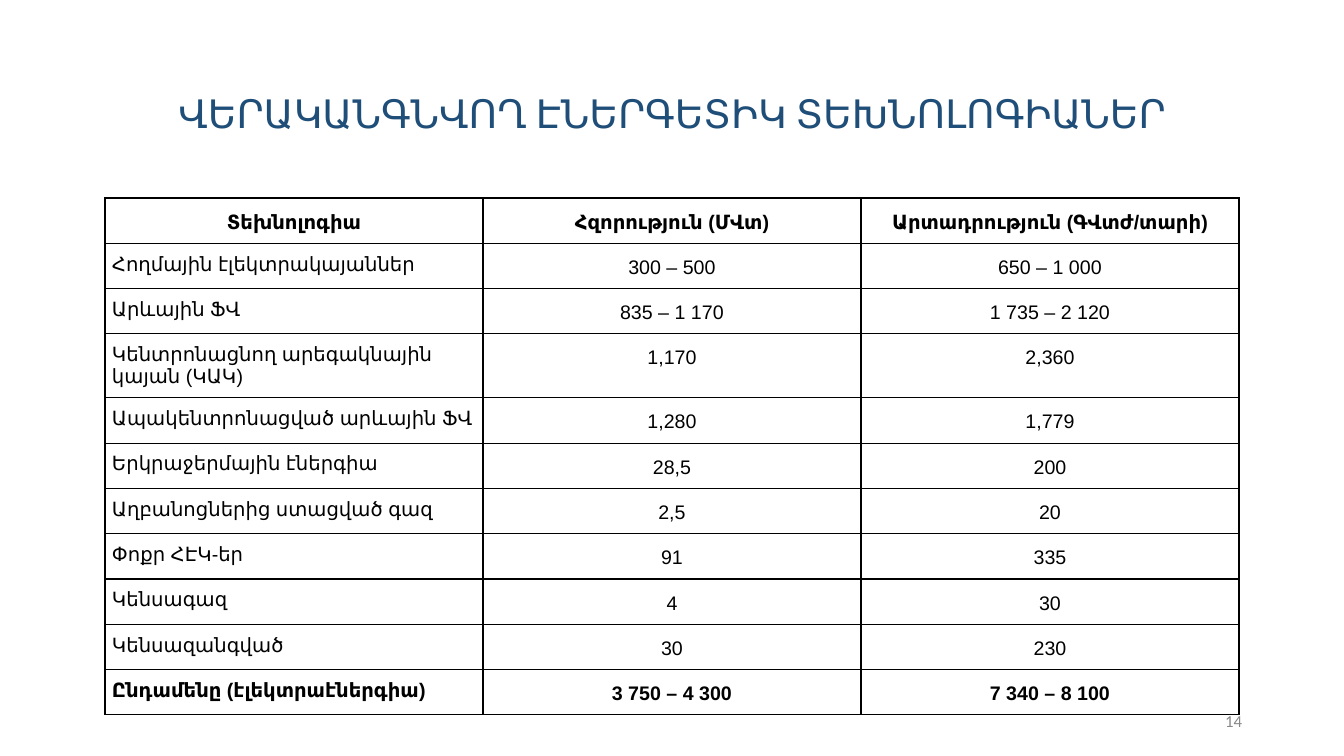
"""Build a slide with a table of renewable energy technologies."""
from lxml.etree import SubElement
from pptx import Presentation
from pptx.dml.color import RGBColor
from pptx.enum.text import MSO_ANCHOR as Anchor, PP_ALIGN as Align
from pptx.oxml.ns import qn
from pptx.util import Pt

BLACK = RGBColor(0x00, 0x00, 0x00)
NAVY = RGBColor(0x1F, 0x4E, 0x79)
GRAY = RGBColor(0x88, 0x88, 0x88)
SLIDE_WIDTH, SLIDE_HEIGHT = 1344, 756
COLUMN_WIDTH, ROW_HEIGHT = 378, 42
BORDER_WIDTH = Pt(1)

ROWS = [
    ("Տեխնոլոգիա", "Հզորություն (ՄՎտ)", "Արտադրություն (ԳՎտժ/տարի)"),
    ("Հողմային էլեկտրակայաններ", "300 – 500", "650 – 1 000"),
    ("Արևային ՖՎ", "835 – 1 170", "1 735 – 2 120"),
    ("Կենտրոնացնող արեգակնային կայան (ԿԱԿ)", "1,170", "2,360"),
    ("Ապակենտրոնացված արևային ՖՎ", "1,280", "1,779"),
    ("Երկրաջերմային էներգիա", "28,5", "200"),
    ("Աղբանոցներից ստացված գազ", "2,5", "20"),
    ("Փոքր ՀԷԿ-եր", "91", "335"),
    ("Կենսագազ", "4", "30"),
    ("Կենսազանգված", "30", "230"),
    ("Ընդամենը (էլեկտրաէներգիա)", "3 750 – 4 300", "7 340 – 8 100"),
]
TEXTS = [
    ("ՎԵՐԱԿԱՆԳՆՎՈՂ ԷՆԵՐԳԵՏԻԿ ՏԵԽՆՈԼՈԳԻԱՆԵՐ", (93, 40, 1159, 146), 28, NAVY, Align.CENTER),
    ("14", (950, 701, 302, 40), 12, GRAY, Align.RIGHT),
]


def px(length):
    return round(length * 12192000 / SLIDE_WIDTH)


def format_paragraph(paragraph, font_name, size, color, alignment, bold=False):
    paragraph.alignment = alignment
    font = paragraph.runs[0].font
    font.name, font.size, font.bold = font_name, Pt(size), bold
    font.color.rgb = color


presentation = Presentation()
presentation.slide_width = px(SLIDE_WIDTH)
presentation.slide_height = px(SLIDE_HEIGHT)
slide = presentation.slides.add_slide(presentation.slide_layouts[6])

table = slide.shapes.add_table(
    len(ROWS), 3, px(105), px(198), px(3 * COLUMN_WIDTH), px(len(ROWS) * ROW_HEIGHT)
).table
table.first_row = table.horz_banding = False
for column in table.columns:
    column.width = px(COLUMN_WIDTH)

for row_index, row in enumerate(ROWS):
    table.rows[row_index].height = px(ROW_HEIGHT)
    is_header = row_index == 0
    bold = is_header or row_index == len(ROWS) - 1
    for column_index, text in enumerate(row):
        cell = table.cell(row_index, column_index)
        cell.text_frame.text = text
        cell.margin_left = cell.margin_right = px(7)
        cell.margin_top = cell.margin_bottom = px(10)
        paragraph = cell.text_frame.paragraphs[0]
        centered = is_header or column_index > 0
        if centered:
            paragraph.line_spacing = 1.15
        alignment = Align.CENTER if centered else Align.LEFT
        format_paragraph(paragraph, "Arial", 14, BLACK, alignment, bold)

        properties = cell._tc.get_or_add_tcPr()
        for side in ("a:lnL", "a:lnR", "a:lnT", "a:lnB"):
            border = SubElement(properties, qn(side), w=str(BORDER_WIDTH))
            fill = SubElement(border, qn("a:solidFill"))
            SubElement(fill, qn("a:srgbClr"), val=str(BLACK))
        cell.fill.background()

for text, (left, top, width, height), size, color, alignment in TEXTS:
    text_box = slide.shapes.add_textbox(px(left), px(top), px(width), px(height))
    text_frame = text_box.text_frame
    text_frame.word_wrap = True
    text_frame.vertical_anchor = Anchor.MIDDLE
    text_frame.text = text
    format_paragraph(text_frame.paragraphs[0], "Calibri", size, color, alignment)

presentation.save("out.pptx")
